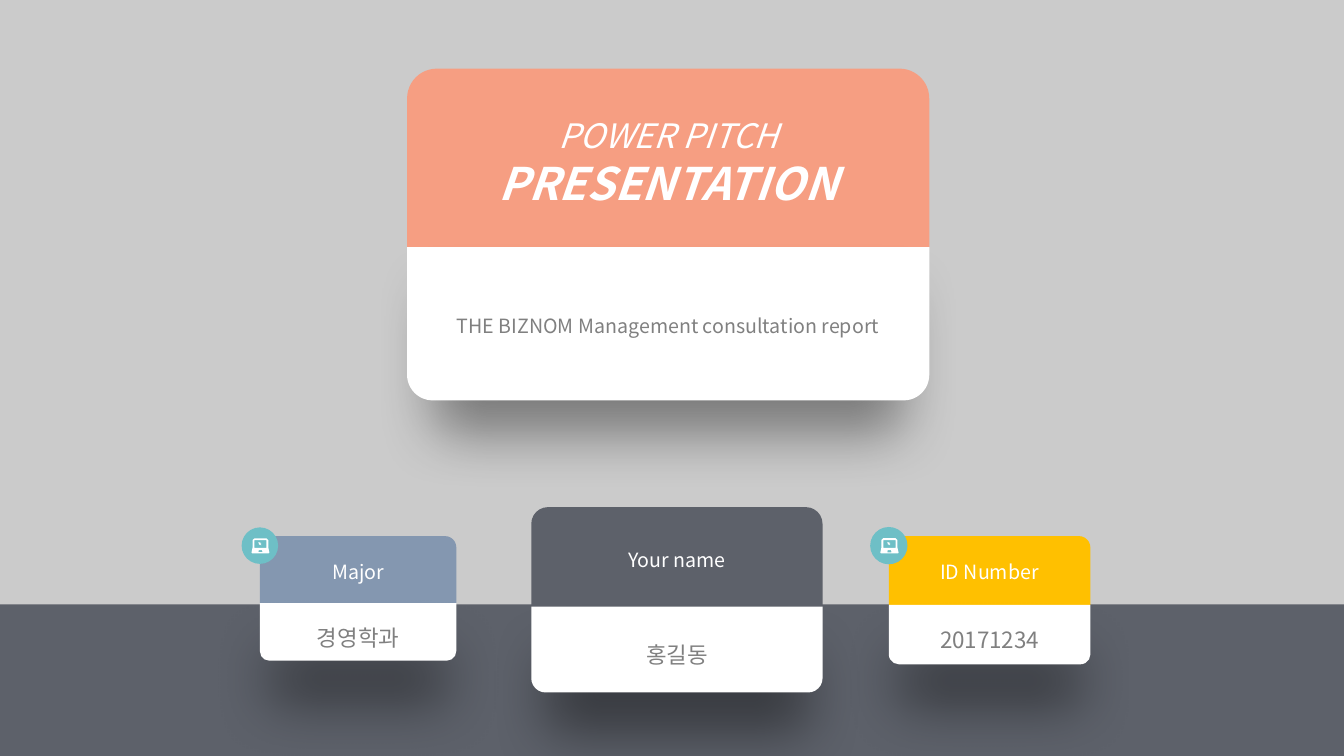
from dataclasses import dataclass

from lxml.etree import SubElement
from pptx import Presentation
from pptx.dml.color import RGBColor
from pptx.enum.shapes import MSO_SHAPE
from pptx.enum.text import MSO_ANCHOR, PP_ALIGN
from pptx.oxml.ns import qn
from pptx.util import Cm, Pt


@dataclass(frozen=True)
class Theme:
    font: str = "Noto Sans CJK KR"
    wall: str = "CBCBCB"
    slate: str = "5D616A"
    coral: str = "F69E82"
    amber: str = "FFC000"
    blue: str = "8497B0"
    teal: str = "6EBFC6"
    white: str = "FFFFFF"
    grey: str = "808080"
    shadow: str = "000000"
    title_size: int = 32
    lead_size: int = 24
    value_size: int = 16
    label_size: int = 14


theme = Theme()


def paint(shape, color):
    """Give the shape a plain fill, with no line and no shadow."""
    shape.fill.solid()
    shape.fill.fore_color.rgb = RGBColor.from_string(color)
    shape.line.fill.background()
    shape.shadow.inherit = False
    return shape


def write(shape, text, size, color, bold=False, italic=False, spacing=1.0):
    """Append one formatted run to the shape's centred paragraph."""
    frame = shape.text_frame
    frame.word_wrap = True
    frame.vertical_anchor = MSO_ANCHOR.MIDDLE
    paragraph = frame.paragraphs[0]
    paragraph.alignment = PP_ALIGN.CENTER
    paragraph.line_spacing = spacing
    run = paragraph.add_run()
    run.text = text
    font = run.font
    font.name, font.size, font.bold, font.italic = theme.font, Pt(size), bold, italic
    font.color.rgb = RGBColor.from_string(color)
    properties = run._r.get_or_add_rPr()
    SubElement(properties, qn("a:ea")).set("typeface", theme.font)


presentation = Presentation()
presentation.slide_width, presentation.slide_height = Cm(33.87), Cm(19.05)
slide = presentation.slides.add_slide(presentation.slide_layouts[6])
slide.background.fill.solid()
slide.background.fill.fore_color.rgb = RGBColor.from_string(theme.wall)

floor_top = Cm(15.23)
paint(slide.shapes.add_shape(MSO_SHAPE.RECTANGLE, 0, floor_top, presentation.slide_width,
                             presentation.slide_height - floor_top), theme.slate)

# Laptop outlines, in hundredths of the badge diameter
laptop = [
    [(35, 30), (68, 30), (73, 35), (73, 55), (76, 69), (74, 71),
     (29, 71), (27, 69), (30, 55), (30, 35)],
    [(35, 35), (68, 35), (68, 56), (35, 56)],
    [(47, 62), (56, 62), (57, 68), (46, 68)],
]
cursor = [[(46, 40), (54, 43), (51, 45), (54, 48), (53, 49), (50, 46), (48, 48)]]

label = dict(size=theme.label_size, color=theme.white)
lead = dict(size=theme.lead_size, color=theme.white, italic=True)
title = dict(size=theme.title_size, color=theme.white, bold=True, italic=True)

# left, top, width, header height, body height, header colour,
# header runs, body text, body size, badge diameter
cards = [
    (10.26, 1.73, 13.16, 4.5, 3.86, theme.coral,
     [("POWER PITCH ", lead), ("PRESENTATION", title)],
     "THE BIZNOM Management consultation report", theme.label_size, None),
    (22.4, 13.51, 5.08, 1.73, 1.5, theme.amber,
     [("ID Number", label)], "20171234", theme.value_size, 0.94),
    (13.39, 12.78, 7.34, 2.51, 2.16, theme.slate,
     [("Your name", label)], "홍길동", theme.value_size, None),
    (6.55, 13.51, 4.95, 1.69, 1.45, theme.blue,
     [("Major", label)], "경영학과", theme.value_size, 0.92),
]

for (left, top, width, header_height, body_height, header_color,
     header_runs, body_text, body_size, badge_size) in cards:
    card = slide.shapes.add_group_shape().shapes

    header = paint(card.add_shape(MSO_SHAPE.ROUND_2_SAME_RECTANGLE, Cm(left), Cm(top),
                                  Cm(width), Cm(header_height)), header_color)
    for text, style in header_runs:
        write(header, text, **style)

    body = paint(card.add_shape(MSO_SHAPE.ROUND_2_SAME_RECTANGLE, Cm(left),
                                Cm(top + header_height), Cm(width), Cm(body_height)),
                 theme.white)
    body.adjustments[0], body.adjustments[1] = 0, 0.167
    write(body, body_text, body_size, theme.grey, spacing=1.5)

    effects = body._element.spPr.find(qn("a:effectLst"))
    shadow = SubElement(effects, qn("a:outerShdw"), blurRad=str(Pt(41)), dist=str(Pt(35)),
                        dir="5400000", sx="90000", sy="90000", algn="t", rotWithShape="0")
    shadow_color = SubElement(shadow, qn("a:srgbClr"), val=theme.shadow)
    SubElement(shadow_color, qn("a:alpha"), val="40000")

    if badge_size:
        diameter = Cm(badge_size)
        badge_left = Cm(left) - diameter // 2
        badge_top = Cm(top + 0.24) - diameter // 2
        paint(card.add_shape(MSO_SHAPE.OVAL, badge_left, badge_top, diameter, diameter),
              theme.teal)
        for outlines in (laptop, cursor):
            builder = card.build_freeform(*outlines[0][0], scale=diameter / 100)
            builder.add_line_segments(outlines[0][1:])
            for hole in outlines[1:]:
                builder.move_to(*hole[0])
                builder.add_line_segments(hole[1:])
            paint(builder.convert_to_shape(badge_left, badge_top), theme.white)

presentation.save("out.pptx")
